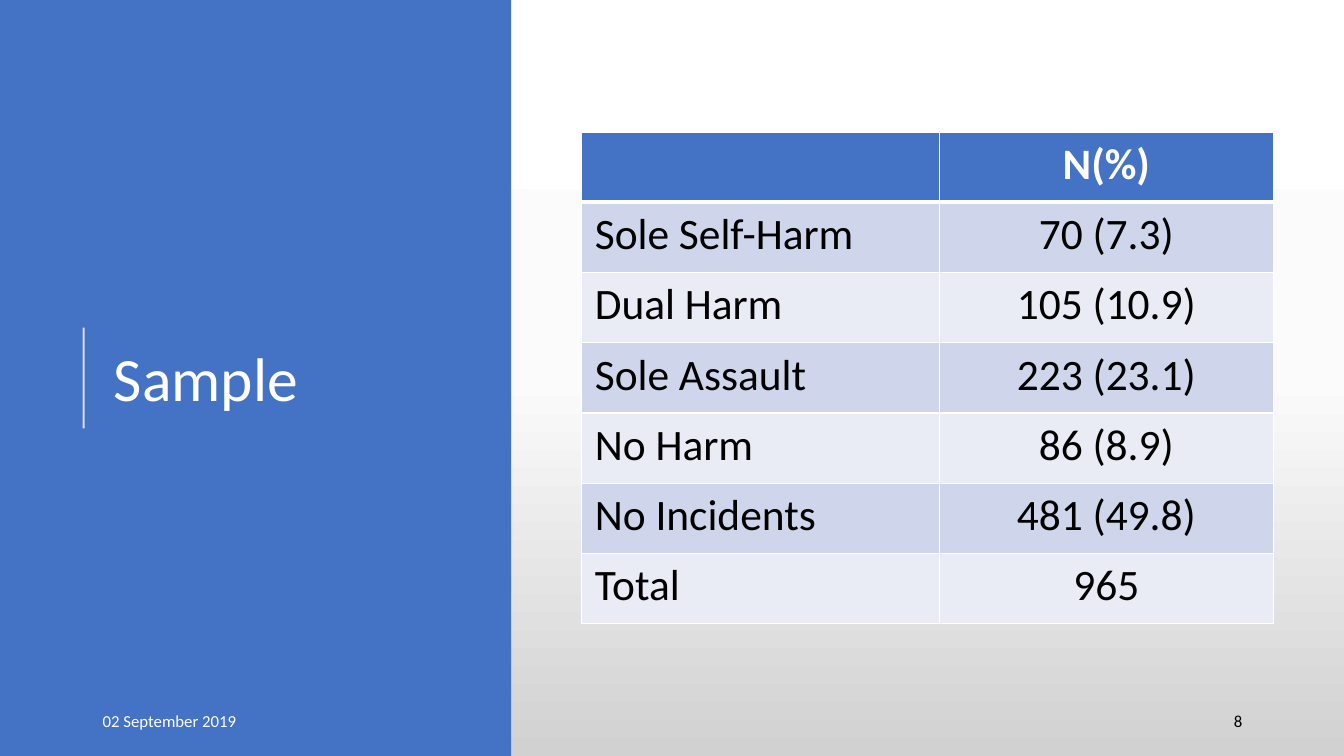
from copy import deepcopy

from pptx import Presentation
from pptx.dml.color import RGBColor
from pptx.enum.shapes import MSO_CONNECTOR, MSO_SHAPE
from pptx.enum.text import MSO_ANCHOR, PP_ALIGN
from pptx.oxml.ns import qn
from pptx.oxml.xmlchemy import OxmlElement
from pptx.util import Inches, Pt

RECTANGLE = MSO_SHAPE.RECTANGLE
STRAIGHT = MSO_CONNECTOR.STRAIGHT
MIDDLE = MSO_ANCHOR.MIDDLE
LEFT, CENTER, RIGHT = PP_ALIGN.LEFT, PP_ALIGN.CENTER, PP_ALIGN.RIGHT

FONT = "Calibri"
BLUE = RGBColor(0x44, 0x72, 0xC4)
WHITE = RGBColor(0xFF, 0xFF, 0xFF)
BLACK = RGBColor(0x00, 0x00, 0x00)
BAND_DARK = RGBColor(0xCF, 0xD5, 0xEA)
BAND_LIGHT = RGBColor(0xE9, 0xEB, 0xF5)
BACKGROUND_STOPS = [
    (0, WHITE),
    (0.5, RGBColor(0xFB, 0xFB, 0xFB)),
    (1, RGBColor(0xD1, 0xD1, 0xD1)),
]

SAMPLE_ROWS = [
    ("", "N(%)"),
    ("Sole Self-Harm", "70 (7.3)"),
    ("Dual Harm", "105 (10.9)"),
    ("Sole Assault", "223 (23.1)"),
    ("No Harm", "86 (8.9)"),
    ("No Incidents", "481 (49.8)"),
    ("Total", "965"),
]
COLUMN_SHARES = (3.54 / 6.85, 3.31 / 6.85)


def add_span(para, text, size, color, bold=False):
    span = para.add_run()
    span.text = text
    span.font.name = FONT
    span.font.size = Pt(size)
    span.font.bold = bold
    span.font.color.rgb = color


def paint_background(page):
    fill = page.background.fill
    fill.gradient()
    fill.gradient_angle = 270
    # A new gradient has two stops; the third is cloned from the last
    stop_list = page.element.find(".//" + qn("a:gsLst"))
    stop_list.append(deepcopy(stop_list[-1]))
    for stop, (position, color) in zip(fill.gradient_stops, BACKGROUND_STOPS):
        stop.position = position
        stop.color.rgb = color


def add_title_panel(page, left, top, width, height):
    # Blue panel, moved behind the title placeholder
    panel = page.shapes.add_shape(RECTANGLE, left, top, width, height)
    panel.shadow.inherit = False
    panel.fill.solid()
    panel.fill.fore_color.rgb = BLUE
    panel.line.fill.background()
    title = page.shapes.title
    title.element.addprevious(panel.element)

    # Accent rule
    rule_left = left + Inches(0.83)
    rule = page.shapes.add_connector(
        STRAIGHT, rule_left, top + Inches(4.25), rule_left, top + Inches(3.25))
    rule.line.color.rgb = WHITE
    rule.line.width = Pt(1.5)
    alpha = OxmlElement("a:alpha")
    alpha.set("val", "80000")
    rule.element.spPr.find(".//" + qn("a:srgbClr")).append(alpha)
    rule.element.spPr.append(OxmlElement("a:effectLst"))
    title.element.addprevious(rule.element)

    # Title
    title.left, title.top = left + Inches(1.03), top + Inches(0.78)
    title.width, title.height = Inches(3.69), Inches(6.02)
    frame = title.text_frame
    frame.word_wrap = True
    frame.vertical_anchor = MIDDLE
    para = frame.paragraphs[0]
    para.alignment = LEFT
    para.line_spacing = 0.9
    add_span(para, "Sample", 44, WHITE)


def add_border(cell, side, points):
    border = OxmlElement("a:ln" + side)
    border.set("w", str(Pt(points)))
    fill = OxmlElement("a:solidFill")
    color = OxmlElement("a:srgbClr")
    color.set("val", str(WHITE))
    fill.append(color)
    border.append(fill)
    cell._tc.get_or_add_tcPr().append(border)


def format_cell(cell, row, column, text):
    heading = row == 0
    cell.margin_left = cell.margin_right = Inches(0.13)
    cell.margin_top = cell.margin_bottom = Inches(0.06)
    # The edge under the heading row is thicker
    thick_side = {0: "B", 1: "T"}.get(row)
    for side in "LRTB":
        add_border(cell, side, 3 if side == thick_side else 1)
    cell.fill.solid()
    band = BAND_DARK if row % 2 else BAND_LIGHT
    cell.fill.fore_color.rgb = BLUE if heading else band
    if text:
        para = cell.text_frame.paragraphs[0]
        para.alignment = CENTER if column else LEFT
        add_span(para, text, 31, WHITE if heading else BLACK, heading)


def add_sample_table(page, left, top, width, height):
    table = page.shapes.add_table(
        len(SAMPLE_ROWS), len(COLUMN_SHARES), left, top, width, height).table
    for column, share in zip(table.columns, COLUMN_SHARES):
        column.width = int(width * share)
    for row_index, texts in enumerate(SAMPLE_ROWS):
        table.rows[row_index].height = int(height / len(SAMPLE_ROWS))
        for column_index, text in enumerate(texts):
            format_cell(table.cell(row_index, column_index),
                        row_index, column_index, text)


def add_footer(page, left, top, width, height):
    box_width = Inches(3)
    entries = [
        (left, "02 September 2019", LEFT, WHITE),
        (left + width - box_width, "8", RIGHT, BLACK),
    ]
    for box_left, text, alignment, color in entries:
        box = page.shapes.add_textbox(box_left, top, box_width, height)
        frame = box.text_frame
        frame.word_wrap = True
        frame.vertical_anchor = MIDDLE
        para = frame.paragraphs[0]
        para.alignment = alignment
        para.space_after = Pt(6)
        add_span(para, text, 12, color)


def main():
    deck = Presentation()
    deck.slide_width, deck.slide_height = Inches(13.33), Inches(7.5)
    page = deck.slides.add_slide(deck.slide_layouts.get_by_name("Title Only"))
    paint_background(page)
    add_title_panel(page, 0, 0, Inches(5.07), deck.slide_height)
    add_sample_table(page, Inches(5.77), Inches(1.31), Inches(6.86), Inches(4.88))
    add_footer(page, Inches(0.92), Inches(6.95), Inches(11.5), Inches(0.4))
    deck.save("out.pptx")


if __name__ == "__main__":
    main()
